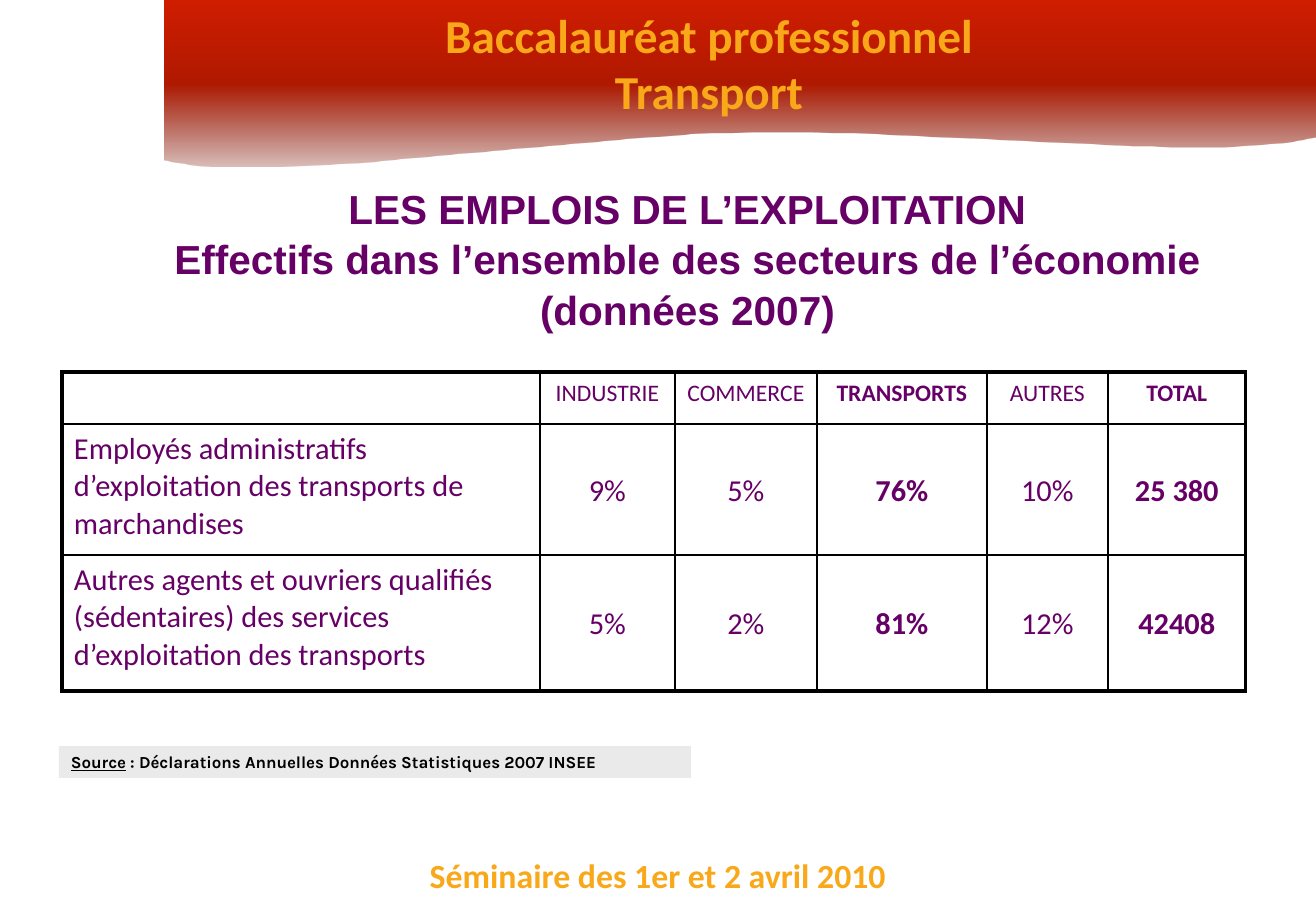
from dataclasses import dataclass

from lxml.etree import SubElement
from pptx import Presentation
from pptx.dml.color import RGBColor
from pptx.enum.text import MSO_ANCHOR, MSO_AUTO_SIZE, PP_ALIGN
from pptx.enum.shapes import MSO_SHAPE
from pptx.oxml.ns import qn
from pptx.util import Pt

PX = 7526  # EMU in one px


@dataclass(frozen=True)
class Theme:
    accent: str = "F8A818"
    ink: str = "660066"
    black: str = "000000"
    source_fill: str = "EAEAEA"
    body_font: str = "Calibri"
    title_font: str = "Arial"
    source_font: str = "Karla"
    band_size: int = 28
    title_size: int = 24
    footer_size: int = 20
    cell_size: int = 18
    header_size: int = 14
    source_size: int = 10
    outer_line: float = 2.25
    inner_line: float = 1


@dataclass(frozen=True)
class Box:
    x: int
    y: int
    w: int
    h: int

    def emu(self) -> tuple[int, ...]:
        return tuple(v * PX for v in (self.x, self.y, self.w, self.h))


@dataclass(frozen=True)
class Label:
    box: Box
    size: int
    lines: tuple[str, ...]


@dataclass(frozen=True)
class Column:
    width: int
    cells: tuple[str, str, str]
    bold: bool = False


@dataclass(frozen=True)
class Stop:
    position: int
    color: str
    opacity: int = 100


T = Theme()
LABELS = (
    Label(Box(329, 849, 658, 53), T.footer_size, ("Séminaire des 1er et 2 avril 2010",)),
    Label(Box(380, 0, 658, 126), T.band_size, ("Baccalauréat professionnel", "Transport")),
)
TITLE = ("LES EMPLOIS DE L’EXPLOITATION",
         "Effectifs dans l’ensemble des secteurs de l’économie (données 2007)")
COLUMNS = (
    Column(478, ("", "Employés administratifs d’exploitation des transports de marchandises",
                 "Autres agents et ouvriers qualifiés (sédentaires) des services "
                 "d’exploitation des transports")),
    Column(135, ("INDUSTRIE", "9%", "5%")),
    Column(142, ("COMMERCE", "5%", "2%")),
    Column(170, ("TRANSPORTS", "76%", "81%"), bold=True),
    Column(121, ("AUTRES", "10%", "12%")),
    Column(138, ("TOTAL", "25 380", "42408"), bold=True),
)
ROW_HEIGHTS = (52, 131, 136)
BAND_STOPS = (Stop(0, "7B1100", 27), Stop(50, "AF1900"), Stop(100, "D01D00"))
WAVE = (
    ((1316, 137), (1222, 163), (943, 129), (751, 132)),
    ((751, 132), (559, 136), (262, 186), (164, 160)),
)


def set_all(target, values: dict) -> None:
    for name, value in values.items():
        setattr(target, name, value)


def add_run(p, text: str, size: int, color: str, font: str, bold: bool = True,
            underline: bool = False) -> None:
    r = p.add_run()
    r.text = text
    set_all(r.font, {"size": Pt(size), "name": font, "bold": bold, "underline": underline})
    r.font.color.rgb = RGBColor.from_string(color)


def curve_points(curve, steps: int = 30) -> list[tuple[float, float]]:
    """Points along a cubic curve, without its start."""
    points = []
    for i in range(1, steps + 1):
        t = i / steps
        weights = ((1 - t) ** 3, 3 * t * (1 - t) ** 2, 3 * t * t * (1 - t), t ** 3)
        points.append(tuple(sum(k * pt[axis] for k, pt in zip(weights, curve))
                            for axis in (0, 1)))
    return points


def add_band(slide) -> None:
    builder = slide.shapes.build_freeform(164, 0, scale=PX)
    edge = [pt for curve in WAVE for pt in curve_points(curve)]
    builder.add_line_segments([(1316, 0), WAVE[0][0], *edge], close=True)
    s = builder.convert_to_shape()
    s.shadow.inherit = False
    s.line.fill.background()
    s.fill.gradient()
    s.fill.gradient_angle = 90
    stops = next(s._element.iter(qn("a:gsLst")))
    for old in list(stops):
        stops.remove(old)
    for stop in BAND_STOPS:
        gs = SubElement(stops, qn("a:gs"), pos=str(stop.position * 1000))
        color = SubElement(gs, qn("a:srgbClr"), val=stop.color)
        if stop.opacity < 100:
            SubElement(color, qn("a:alpha"), val=str(stop.opacity * 1000))


def add_label(slide, label: Label) -> None:
    tf = slide.shapes.add_textbox(*label.box.emu()).text_frame
    tf.word_wrap = True
    for i, line in enumerate(label.lines):
        p = tf.add_paragraph() if i else tf.paragraphs[0]
        p.alignment = PP_ALIGN.CENTER
        add_run(p, line, label.size, T.accent, T.body_font)


def fill_title(slide) -> None:
    s = slide.shapes.title
    s.left, s.top, s.width, s.height = Box(97, 175, 1181, 153).emu()
    tf = s.text_frame
    set_all(tf, {"word_wrap": True, "auto_size": MSO_AUTO_SIZE.NONE,
                 "vertical_anchor": MSO_ANCHOR.MIDDLE,
                 "margin_top": 12 * PX, "margin_bottom": 0})
    p = tf.paragraphs[0]
    set_all(p, {"alignment": PP_ALIGN.CENTER, "line_spacing": 1.04})
    for i, line in enumerate(TITLE):
        if i:
            p.add_line_break()
        add_run(p, line, T.title_size, T.ink, T.title_font)


def add_source(slide) -> None:
    s = slide.shapes.add_shape(MSO_SHAPE.RECTANGLE, *Box(59, 746, 632, 32).emu())
    s.shadow.inherit = False
    s.line.fill.background()
    s.fill.solid()
    s.fill.fore_color.rgb = RGBColor.from_string(T.source_fill)
    tf = s.text_frame
    set_all(tf, {"word_wrap": True, "vertical_anchor": MSO_ANCHOR.MIDDLE})
    p = tf.paragraphs[0]
    p.alignment = PP_ALIGN.LEFT
    add_run(p, "Source", T.source_size, T.black, T.source_font, underline=True)
    add_run(p, " : Déclarations Annuelles Données Statistiques 2007 INSEE",
            T.source_size, T.black, T.source_font)


def set_borders(cell, row: int, col: int) -> None:
    """Thick lines on the table's outer edge, thin lines inside."""
    outer = {"a:lnL": col == 0, "a:lnR": col == len(COLUMNS) - 1,
             "a:lnT": row == 0, "a:lnB": row == len(ROW_HEIGHTS) - 1}
    for tag, is_outer in outer.items():
        width = Pt(T.outer_line if is_outer else T.inner_line)
        ln = SubElement(cell._tc.get_or_add_tcPr(), qn(tag), w=str(width))
        SubElement(SubElement(ln, qn("a:solidFill")), qn("a:srgbClr"), val=T.black)


def add_jobs_table(slide) -> None:
    box = Box(62, 372, sum(c.width for c in COLUMNS), sum(ROW_HEIGHTS))
    table = slide.shapes.add_table(len(ROW_HEIGHTS), len(COLUMNS), *box.emu()).table
    set_all(table, {"first_row": False, "horz_banding": False})
    for row, height in enumerate(ROW_HEIGHTS):
        table.rows[row].height = height * PX
    for col, column in enumerate(COLUMNS):
        table.columns[col].width = column.width * PX
        side = (8 if col else 12) * PX
        for row, text in enumerate(column.cells):
            cell = table.cell(row, col)
            set_borders(cell, row, col)
            cell.fill.background()
            middle = row and col
            set_all(cell, {"margin_left": side, "margin_right": side, "margin_top": 7 * PX,
                           "margin_bottom": 4 * PX,
                           "vertical_anchor": MSO_ANCHOR.MIDDLE if middle else MSO_ANCHOR.TOP})
            p = cell.text_frame.paragraphs[0]
            p.alignment = PP_ALIGN.CENTER if col else PP_ALIGN.LEFT
            if text:
                add_run(p, text, T.cell_size if row else T.header_size, T.ink, T.body_font,
                        column.bold)


def main() -> None:
    prs = Presentation()
    prs.slide_width, prs.slide_height = 1316 * PX, 911 * PX
    slide = prs.slides.add_slide(prs.slide_layouts[5])
    add_band(slide)
    for label in LABELS:
        add_label(slide, label)
    fill_title(slide)
    add_source(slide)
    add_jobs_table(slide)
    prs.save("out.pptx")


if __name__ == "__main__":
    main()
